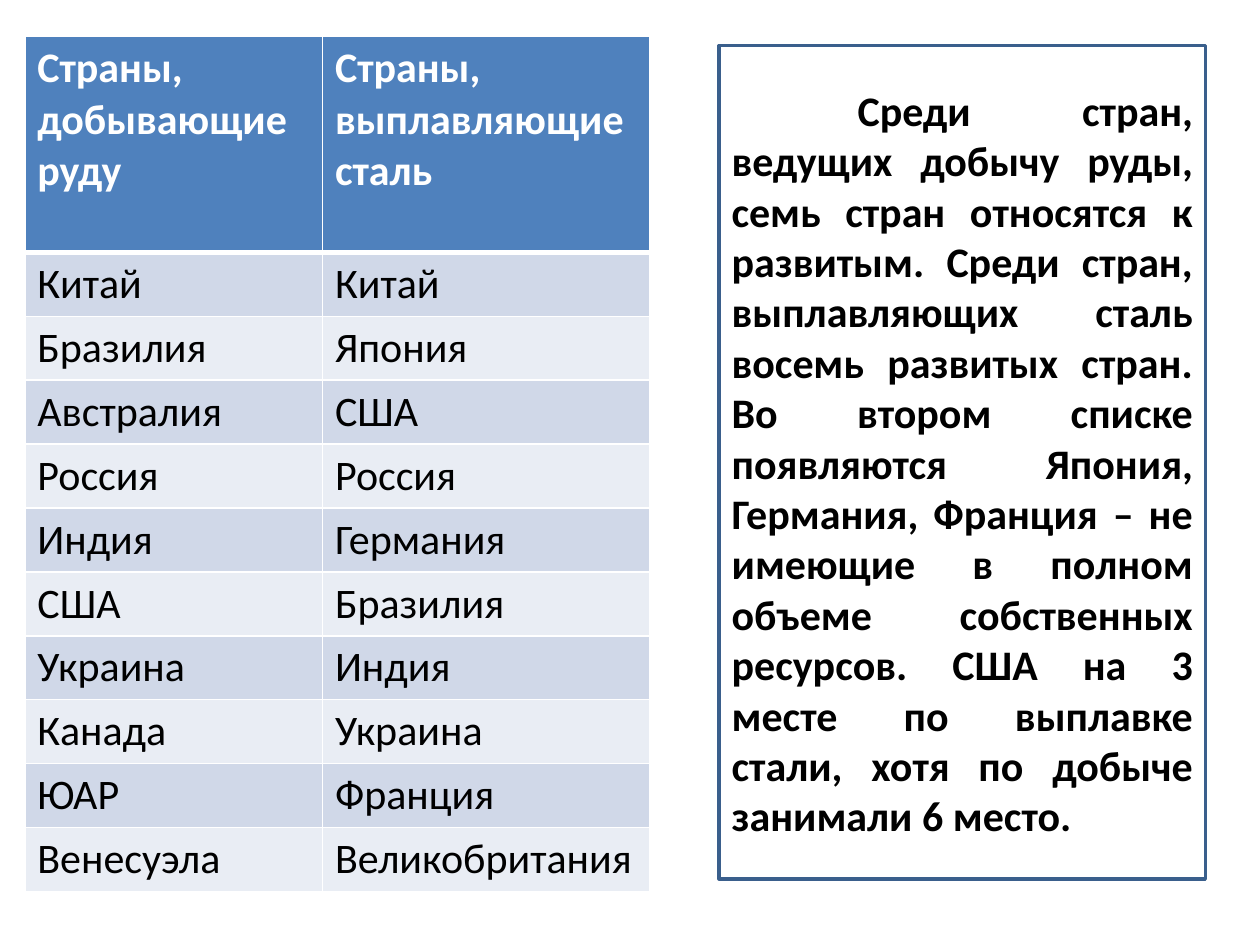
from lxml.etree import SubElement
from pptx import Presentation
from pptx.dml.color import RGBColor
from pptx.enum.shapes import MSO_SHAPE as Shape
from pptx.enum.text import MSO_ANCHOR as Anchor, PP_ALIGN as Align
from pptx.oxml.ns import qn
from pptx.util import Cm, Pt

COLORS = {
    "header": "4F81BD",
    "odd": "D0D8E8",
    "even": "E9EDF4",
    "white": "FFFFFF",
    "black": "000000",
    "outline": "3A5F8C",
}
ROWS = [
    ("Страны, добывающие руду", "Страны, выплавляющие сталь"),
    ("Китай", "Китай"),
    ("Бразилия", "Япония"),
    ("Австралия", "США"),
    ("Россия", "Россия"),
    ("Индия", "Германия"),
    ("США", "Бразилия"),
    ("Украина", "Индия"),
    ("Канада", "Украина"),
    ("ЮАР", "Франция"),
    ("Венесуэла", "Великобритания"),
]
COMMENT = (
    "Среди стран, ведущих добычу руды, семь стран относятся к развитым. "
    "Среди стран, выплавляющих сталь восемь развитых стран. Во втором списке "
    "появляются Япония, Германия, Франция – не имеющие в полном объеме "
    "собственных ресурсов. США на 3 месте по выплавке стали, хотя по добыче "
    "занимали 6 место."
)


def write(para, text, color, bold):
    span = para.add_run()
    span.text = text
    font_format = {"name": "Calibri", "size": Pt(24), "bold": bold}
    for name, value in font_format.items():
        setattr(span.font, name, value)
    span.font.color.rgb = RGBColor.from_string(COLORS[color])


def add_border(cell, side, width):
    line = SubElement(cell._tc.get_or_add_tcPr(), qn(f"a:{side}"), w=str(Pt(width)))
    fill = SubElement(line, qn("a:solidFill"))
    SubElement(fill, qn("a:srgbClr"), val=COLORS["white"])


deck = Presentation()
deck.slide_width, deck.slide_height = Cm(25.4), Cm(19.05)
page = deck.slides.add_slide(deck.slide_layouts[6])

frame = page.shapes.add_table(
    len(ROWS), 2, Cm(0.5), Cm(0.74), Cm(12.6), Cm(17.2)
)
table = frame.table
for column, width in zip(table.columns, (6, 6.6)):
    column.width = Cm(width)

for row_index, texts in enumerate(ROWS):
    is_header = row_index == 0
    table.rows[row_index].height = Cm(4.35 if is_header else 1.285)
    fill_name = "header" if is_header else ("even", "odd")[row_index % 2]
    for column_index, text in enumerate(texts):
        cell = table.cell(row_index, column_index)
        write(cell.text_frame.paragraphs[0], text,
              "white" if is_header else "black", is_header)
        for side in ("lnL", "lnR", "lnT", "lnB"):
            thick = (row_index, side) in ((0, "lnB"), (1, "lnT"))
            add_border(cell, side, 3 if thick else 1)
        cell.fill.solid()
        cell.fill.fore_color.rgb = RGBColor.from_string(COLORS[fill_name])

box = page.shapes.add_shape(
    Shape.RECTANGLE, Cm(14.5), Cm(0.92), Cm(9.8), Cm(16.8)
)
box.shadow.inherit = False
box.fill.background()
box.line.color.rgb = RGBColor.from_string(COLORS["outline"])
box.line.width = Pt(2)
frame_format = {"word_wrap": True, "vertical_anchor": Anchor.MIDDLE}
for name, value in frame_format.items():
    setattr(box.text_frame, name, value)
para = box.text_frame.paragraphs[0]
para.alignment = Align.JUSTIFY
para._p.get_or_add_pPr().set("indent", str(Cm(2.54)))
write(para, COMMENT, "black", True)

deck.save("out.pptx")
